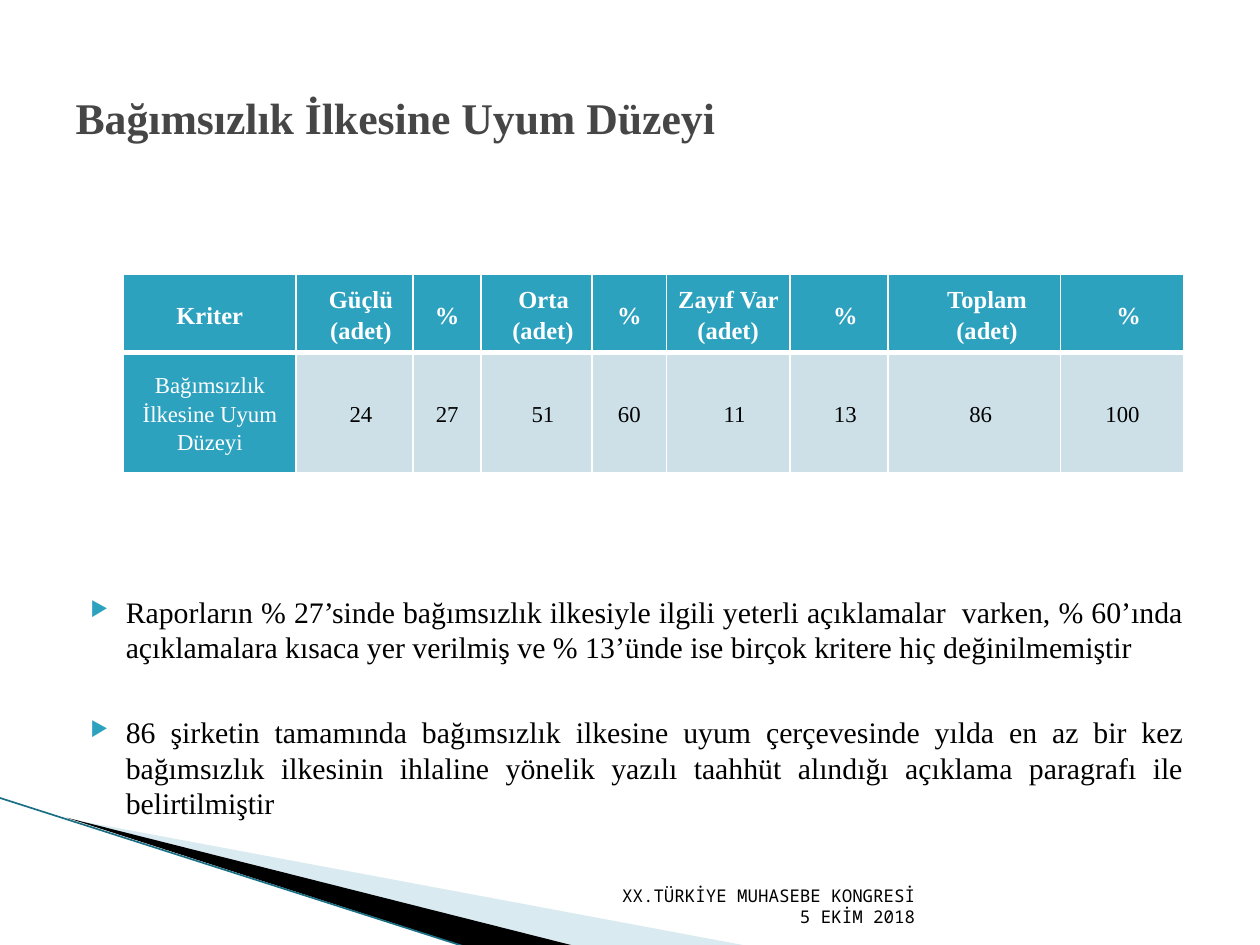
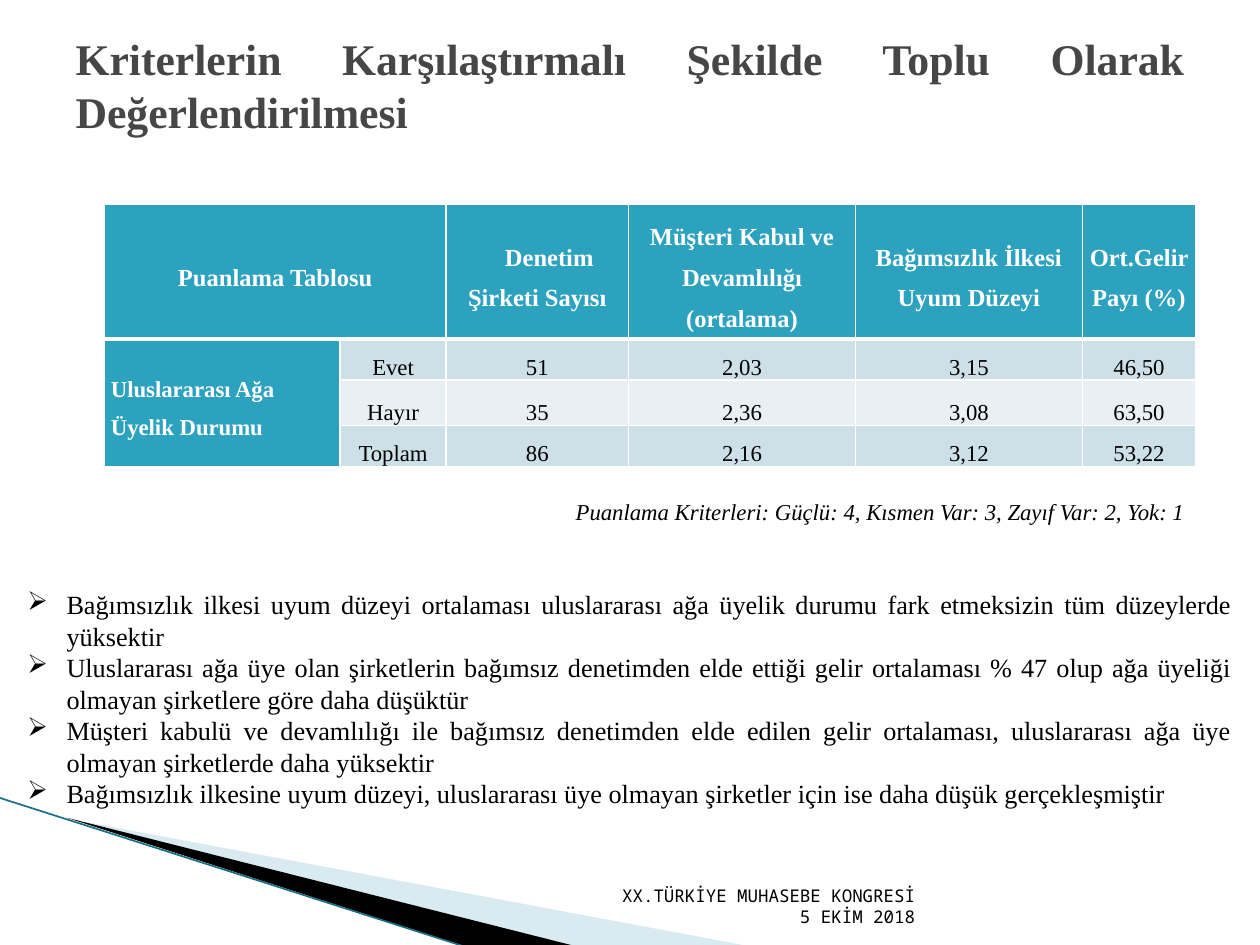
import pptx
import pptx.chart
import pptx.dml.color
import pptx.enum.shapes
import pptx.enum.text
import pptx.oxml
import pptx.oxml.ns
import pptx.util

Inches = pptx.util.Inches
Pt = pptx.util.Pt
RGBColor = pptx.dml.color.RGBColor
ALIGN = pptx.enum.text.PP_ALIGN
ANCHOR = pptx.enum.text.MSO_ANCHOR

TEAL = RGBColor(0x2D, 0xA2, 0xBF)
PALE = RGBColor(0xCD, 0xE0, 0xE8)
PALER = RGBColor(0xE8, 0xF0, 0xF4)
WEDGE = RGBColor(0xA0, 0xCB, 0xDC)
EDGE = RGBColor(0x1A, 0x6F, 0x84)
GREY = RGBColor(0x46, 0x46, 0x46)
BLACK = RGBColor(0, 0, 0)
WHITE = RGBColor(0xFF, 0xFF, 0xFF)
SERIF = "Times New Roman"
MONO = "Noto Sans Mono"


def child(parent, tag, index=None, **attrs):
    """Add a DrawingML element to parent, last or at index."""
    el = pptx.oxml.parse_xml(f"<a:{tag} {pptx.oxml.ns.nsdecls('a')}/>")
    for name, value in attrs.items():
        el.set(name, str(value))
    parent.insert(len(parent) if index is None else index, el)
    return el


def indent(p, left, first):
    pPr = p._p.get_or_add_pPr()
    pPr.set("marL", str(Inches(left)))
    pPr.set("indent", str(Inches(first)))
    return pPr


class Deck:
    def __init__(self):
        self.prs = pptx.Presentation()
        self.prs.slide_width = Inches(10)
        self.prs.slide_height = Inches(7.5)
        self.s = None

    def slide(self, title, top, height):
        self.s = self.prs.slides.add_slide(self.prs.slide_layouts[5])
        sp = self.s.shapes.title
        sp.left, sp.top = Inches(0.5), Inches(top)
        sp.width, sp.height = Inches(9), Inches(height)
        tf = sp.text_frame
        tf.vertical_anchor = ANCHOR.MIDDLE
        p = tf.paragraphs[0]
        p.alignment = ALIGN.JUSTIFY
        self.run(p, title, 25, GREY, bold=True)
        self.corner()
        self.footer()

    def run(self, p, text, size, color=BLACK, font=SERIF, bold=False, italic=False):
        r = p.add_run()
        r.text = text
        r.font.name, r.font.size = font, Pt(size)
        r.font.bold, r.font.italic = bold, italic
        r.font.color.rgb = color

    def wedge(self, points, color, alpha=None):
        points = [(Inches(x), Inches(y)) for x, y in points]
        fb = self.s.shapes.build_freeform(*points[0], scale=1.0)
        fb.add_line_segments(points[1:], close=True)
        sp = fb.convert_to_shape()
        sp.shadow.inherit = False
        sp.fill.solid()
        sp.fill.fore_color.rgb = color
        sp.line.fill.background()
        if alpha:
            clr = sp.fill._xPr.find(".//" + pptx.oxml.ns.qn("a:srgbClr"))
            child(clr, "alpha", val=alpha * 1000)

    def corner(self):
        """Draw the wedges and the line in the lower left corner."""
        self.wedge([(0.55, 6.5), (5.95, 7.51), (4.56, 7.51)], WEDGE, alpha=40)
        self.wedge([(0.53, 6.49), (4.57, 7.51), (3.72, 7.52)], BLACK)
        line = self.s.shapes.add_connector(
            pptx.enum.shapes.MSO_CONNECTOR.STRAIGHT,
            Inches(-0.01), Inches(6.33), Inches(3.71), Inches(7.52))
        line.line.color.rgb = EDGE
        line.line.width = Pt(0.95)
        child(line._element.spPr, "effectLst")

    def textbox(self, left, top, width, height, anchor=ANCHOR.TOP):
        tf = self.s.shapes.add_textbox(
            Inches(left), Inches(top), Inches(width), Inches(height)).text_frame
        tf.word_wrap = True
        tf.vertical_anchor = anchor
        return tf

    def footer(self):
        p = self.textbox(4.79, 7.01, 2.57, 0.4, ANCHOR.BOTTOM).paragraphs[0]
        p.alignment = ALIGN.RIGHT
        self.run(p, "XX.TÜRKİYE MUHASEBE KONGRESİ", 10, font=MONO)
        p.add_line_break()
        self.run(p, "5 EKİM 2018", 10, font=MONO)

    def note(self, text, left, top, width, height):
        p = self.textbox(left, top, width, height, ANCHOR.MIDDLE).paragraphs[0]
        p.alignment = ALIGN.RIGHT
        self.run(p, text, 13, italic=True)

    def bullets(self, texts, box, size, char, left, hang, gap=0, color=None, scale=100):
        tf = self.textbox(*box)
        for i, text in enumerate(texts):
            p = tf.paragraphs[0] if i == 0 else tf.add_paragraph()
            p.alignment = ALIGN.JUSTIFY
            if i:
                p.space_before = Pt(gap)
            pPr = indent(p, left, -hang)
            if color is not None:
                child(child(pPr, "buClr"), "srgbClr", val=color)
            child(pPr, "buSzPct", val=scale * 1000)
            child(pPr, "buChar", char=char)
            self.run(p, text, size)

    def table(self, left, top, cols, rows):
        tbl = self.s.shapes.add_table(
            len(rows), len(cols), Inches(left), Inches(top),
            Inches(sum(cols)), Inches(sum(rows))).table
        tbl.first_row = tbl.horz_banding = False
        for col, width in zip(tbl.columns, cols):
            col.width = Inches(width)
        for row, height in zip(tbl.rows, rows):
            row.height = Inches(height)
        return tbl

    def cell(self, tbl, row, col, text, spacing, anchor=ANCHOR.MIDDLE,
             align=ALIGN.CENTER, bold=False, ind=(0, 0)):
        """Fill one cell; the first row and column are teal headings."""
        c = tbl.cell(row, col)
        c.margin_left = c.margin_right = Inches(0.05)
        c.margin_top = c.margin_bottom = 0
        c.vertical_anchor = anchor
        heading = row == 0 or col == 0
        c.fill.solid()
        c.fill.fore_color.rgb = TEAL if heading else PALE if row % 2 else PALER
        tcPr = c._tc.get_or_add_tcPr()
        for i, side in enumerate("LRTB"):
            thick = (row, side) in ((0, "B"), (1, "T"))
            ln = child(tcPr, "ln" + side, i, w=Pt(3 if thick else 1))
            child(child(ln, "solidFill"), "srgbClr", val=WHITE)
        if text:
            p = c.text_frame.paragraphs[0]
            p.alignment = align
            p.line_spacing = spacing
            indent(p, *ind)
            self.run(p, text, 13 if row else 14, WHITE if heading else BLACK,
                     bold=bold or row == 0)


def independence_slide(deck):
    deck.slide("Bağımsızlık İlkesine Uyum Düzeyi", 0.3, 1.25)
    tbl = deck.table(0.98, 2.18, [1.37, 0.93, 0.54, 0.88, 0.59, 0.98, 0.78, 1.37, 0.98],
                     [0.62, 0.95])
    rows = [
        [("Kriter", 0, 0), ("Güçlü (adet)", 0.1, 0), ("%", 0, 0),
         ("Orta (adet)", 0.1, 0.01), ("%", 0.1, -0.1), ("Zayıf Var (adet)", 0, 0),
         ("%", 0.1, 0), ("Toplam (adet)", 0.2, 0), ("%", 0.2, -0.1)],
        [("Bağımsızlık İlkesine Uyum Düzeyi", 0, 0), ("24", 0.2, -0.1),
         ("27", 0.1, -0.1), ("51", 0.2, -0.1), ("60", 0.2, -0.2), ("11", 0.2, -0.1),
         ("13", 0.2, -0.1), ("86", 0.2, -0.1), ("100", 0, 0)],
    ]
    for i, row in enumerate(rows):
        for j, (text, *ind) in enumerate(row):
            deck.cell(tbl, i, j, text, 1.15, ind=ind)
    deck.bullets([
        "Raporların % 27’sinde bağımsızlık ilkesiyle ilgili yeterli açıklamalar  varken, "
        "% 60’ında açıklamalara kısaca yer verilmiş ve % 13’ünde ise birçok kritere hiç "
        "değinilmemiştir",
        "86 şirketin tamamında bağımsızlık ilkesine uyum çerçevesinde yılda en az bir kez "
        "bağımsızlık ilkesinin ihlaline yönelik yazılı taahhüt alındığı açıklama paragrafı "
        "ile belirtilmiştir",
    ], (0.5, 4.66, 9, 1.9), 17, "▶", 0.4, 0.28, gap=28, color=TEAL, scale=68)


def comparison_slide(deck):
    deck.slide("Kriterlerin Karşılaştırmalı Şekilde Toplu Olarak Değerlendirilmesi",
               -0.11, 1.56)
    tbl = deck.table(0.83, 1.62, [1.87, 0.84, 1.45, 1.8, 1.8, 0.9],
                     [1.07, 0.3, 0.36, 0.31])
    tbl.cell(0, 0).merge(tbl.cell(0, 1))
    tbl.cell(1, 0).merge(tbl.cell(3, 0))
    rows = [
        ["Puanlama Tablosu", "", "Denetim Şirketi Sayısı",
         "Müşteri Kabul ve Devamlılığı (ortalama)", "Bağımsızlık İlkesi Uyum Düzeyi",
         "Ort.Gelir Payı (%)"],
        ["Uluslararası Ağa Üyelik Durumu", "Evet", "51", "2,03", "3,15", "46,50"],
        ["", "Hayır", "35", "2,36", "3,08", "63,50"],
        ["", "Toplam", "86", "2,16", "3,12", "53,22"],
    ]
    for i, row in enumerate(rows):
        for j, text in enumerate(row):
            side = i > 0 and j == 0
            deck.cell(tbl, i, j, text, 1.5,
                      anchor=ANCHOR.BOTTOM if i and j else ANCHOR.MIDDLE,
                      align=ALIGN.LEFT if side else ALIGN.CENTER, bold=side,
                      ind=(0, 0.19) if (i, j) == (0, 2) else (0, 0))
    deck.bullets([
        "Bağımsızlık ilkesi uyum düzeyi ortalaması uluslararası ağa üyelik durumu fark "
        "etmeksizin tüm düzeylerde yüksektir",
        "Uluslararası ağa üye olan şirketlerin bağımsız denetimden elde ettiği gelir "
        "ortalaması % 47 olup ağa üyeliği olmayan şirketlere göre daha düşüktür",
        "Müşteri kabulü ve devamlılığı ile bağımsız denetimden elde edilen gelir "
        "ortalaması, uluslararası ağa üye olmayan şirketlerde daha yüksektir",
        "Bağımsızlık ilkesine uyum düzeyi, uluslararası üye olmayan şirketler için ise "
        "daha düşük gerçekleşmiştir",
    ], (0.12, 4.62, 9.76, 1.87), 15, "➢", 0.31, 0.31)
    deck.note("Puanlama Kriterleri: Güçlü: 4, Kısmen Var: 3, Zayıf Var: 2, Yok: 1",
              1.3, 3.86, 8.19, 0.4)


def main():
    deck = Deck()
    independence_slide(deck)
    comparison_slide(deck)
    deck.prs.save("out.pptx")


if __name__ == "__main__":
    main()
